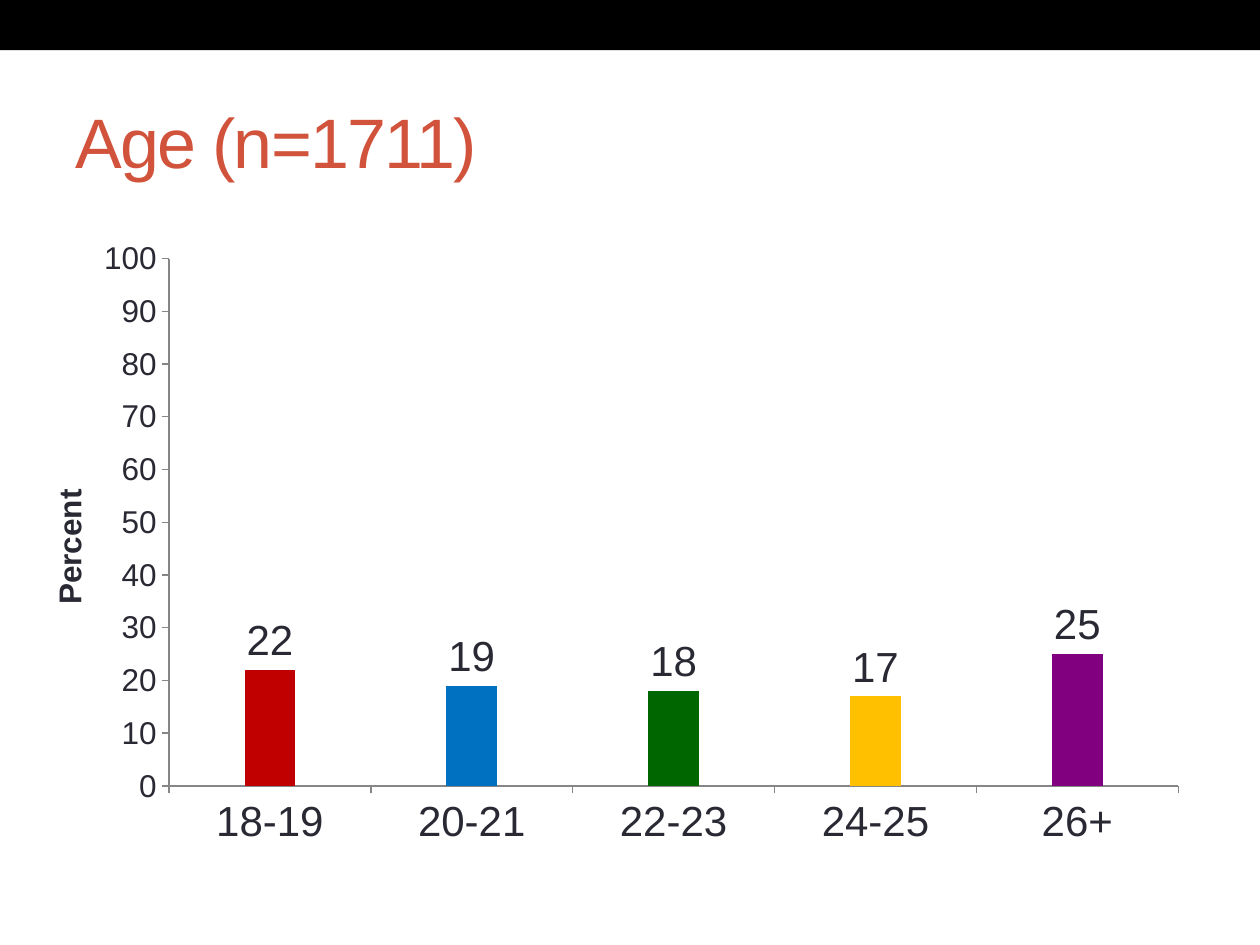
"""Build the age distribution slide with a column chart."""
import pptx
import pptx.chart.data
import pptx.dml.color
import pptx.enum.chart
import pptx.enum.shapes
import pptx.enum.text
import pptx.oxml
import pptx.oxml.ns
import pptx.util

RGBColor = pptx.dml.color.RGBColor
BLACK = RGBColor(0x00, 0x00, 0x00)
RUST = RGBColor(0xD2, 0x53, 0x3C)
INK = RGBColor(0x29, 0x29, 0x34)
GREY = RGBColor(0x86, 0x86, 0x86)
SAGE = RGBColor(0x93, 0xA2, 0x99)
RED = RGBColor(0xC0, 0x00, 0x00)
BLUE = RGBColor(0x00, 0x70, 0xC0)
GREEN = RGBColor(0x00, 0x66, 0x00)
GOLD = RGBColor(0xFF, 0xC0, 0x00)
PURPLE = RGBColor(0x80, 0x00, 0x80)

AGES = [("18-19", 22, RED), ("20-21", 19, BLUE), ("22-23", 18, GREEN),
        ("24-25", 17, GOLD), ("26+", 25, PURPLE)]


def format_font(font, size, color, bold=False):
    values = {"name": "Arial", "size": pptx.util.Pt(size), "bold": bold}
    for key, value in values.items():
        setattr(font, key, value)
    font.color.rgb = color


def place(parent, index, target="", **shares):
    for old in parent.findall(pptx.oxml.ns.qn("c:layout")):
        parent.remove(old)
    modes = "".join(f'<c:{k}Mode val="edge"/>' for k in "xy")
    sizes = "".join(f'<c:{k} val="{v}"/>' for k, v in shares.items())
    parent.insert(index, pptx.oxml.parse_xml(
        f'<c:layout {pptx.oxml.ns.nsdecls("c")}><c:manualLayout>'
        f'{target}{modes}{sizes}</c:manualLayout></c:layout>'))


prs = pptx.Presentation()
prs.slide_width = pptx.util.Inches(10)
prs.slide_height = pptx.util.Inches(7.5)
W, H = prs.slide_width, prs.slide_height
s = prs.slides.add_slide(prs.slide_layouts[5])

sp = s.shapes.add_shape(pptx.enum.shapes.MSO_SHAPE.RECTANGLE, 0, 0, W, int(H * 0.053))
sp.shadow.inherit = False
sp.fill.solid()
sp.fill.fore_color.rgb = BLACK
sp.line.fill.background()

title = s.shapes.title
box = {"left": W * 0.05, "top": H * 0.077, "width": W * 0.9, "height": H * 0.144}
for key, value in box.items():
    setattr(title, key, int(value))
tf = title.text_frame
tf.vertical_anchor = pptx.enum.text.MSO_ANCHOR.MIDDLE
p = tf.paragraphs[0]
p.alignment = pptx.enum.text.PP_ALIGN.LEFT
r = p.add_run()
r.text = "Age (n=1711)"
format_font(r.font, 40, RUST)
r.font._element.set("spc", "-100")

data = pptx.chart.data.CategoryChartData()
data.categories = [age for age, percent, color in AGES]
data.add_series("Series 1", [percent for age, percent, color in AGES])
chart = s.shapes.add_chart(
    pptx.enum.chart.XL_CHART_TYPE.COLUMN_CLUSTERED,
    int(W * 0.025), int(H * 0.244), int(W * 0.925), int(H * 0.744), data).chart
chart.has_legend = False
chart.has_title = False
format_font(chart.font, 18, INK)

for axis, size in ((chart.category_axis, 24), (chart.value_axis, 18)):
    axis.has_major_gridlines = False
    axis.major_tick_mark = pptx.enum.chart.XL_TICK_MARK.OUTSIDE
    axis.minor_tick_mark = pptx.enum.chart.XL_TICK_MARK.NONE
    axis.format.line.color.rgb = GREY
    axis.format.line.width = pptx.util.Pt(0.75)
    format_font(axis.tick_labels.font, size, INK)

axis = chart.value_axis
for key, value in {"minimum_scale": 0, "maximum_scale": 100, "major_unit": 10}.items():
    setattr(axis, key, value)
r = axis.axis_title.text_frame.paragraphs[0].add_run()
r.text = "Percent"
format_font(r.font, 18, INK, bold=True)
axis.axis_title.text_frame._txBody.bodyPr.set("rot", "-5400000")
axis.axis_title.text_frame._txBody.bodyPr.set("vert", "horz")
place(axis.axis_title._element, 1, x=0.01, y=0.36)

plot = chart.plots[0]
plot.gap_width = 297
plot.vary_by_categories = False
series = plot.series[0]
series.format.fill.solid()
series.format.fill.fore_color.rgb = SAGE
for i, (age, percent, color) in enumerate(AGES):
    fill = series.points[i].format.fill
    fill.solid()
    fill.fore_color.rgb = color

labels = series.data_labels
labels.show_value = True
labels.position = pptx.enum.chart.XL_LABEL_POSITION.OUTSIDE_END
format_font(labels.font, 24, INK)
place(chart._chartSpace.chart.plotArea, 0, '<c:layoutTarget val="inner"/>',
      x=0.118, y=0.04, w=0.866, h=0.75)

prs.save("out.pptx")
